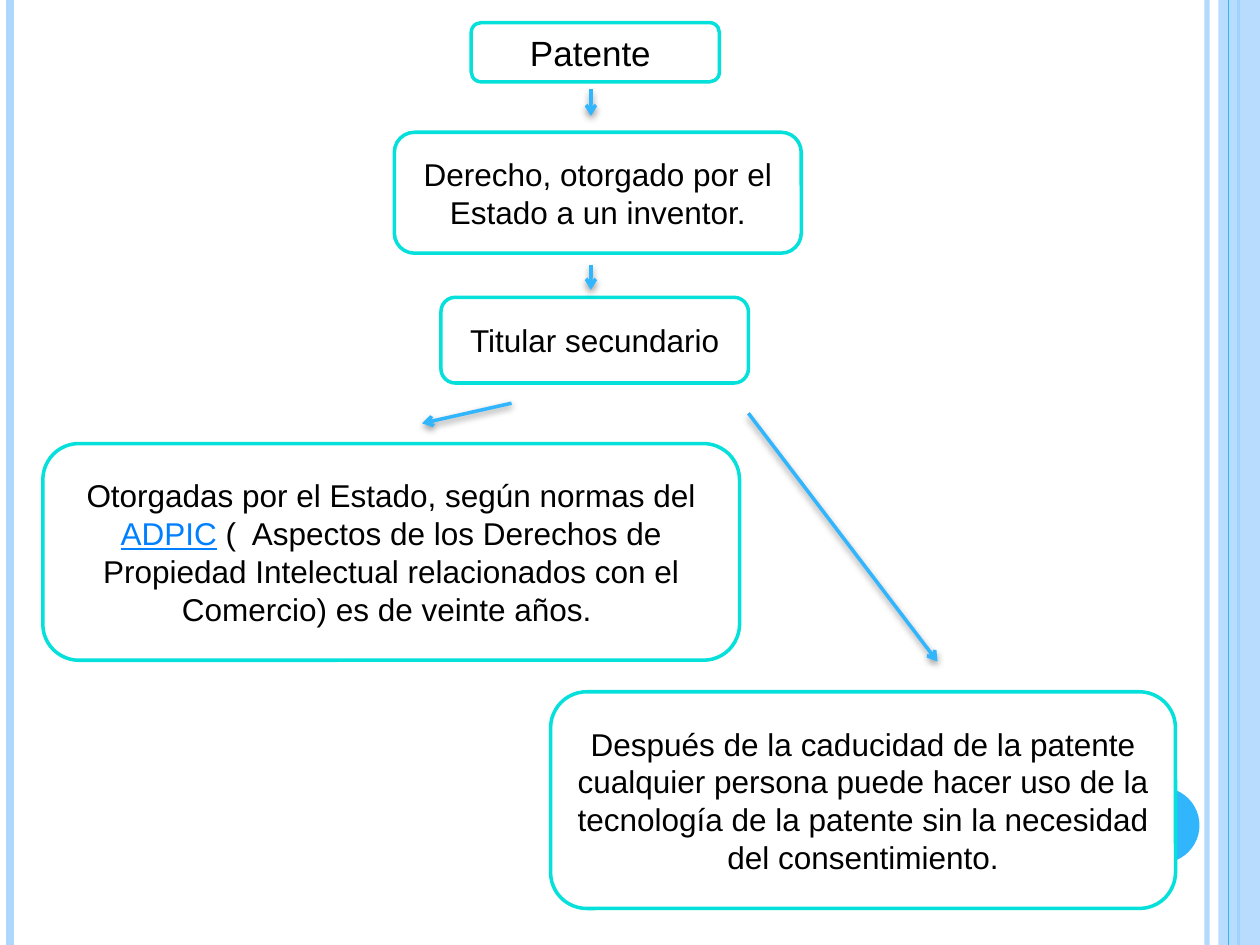
import pptx
import pptx.util
import pptx.dml.color
import pptx.enum.shapes
import pptx.enum.text
import pptx.oxml
import pptx.oxml.ns

Inches = pptx.util.Inches
Pt = pptx.util.Pt
RGBColor = pptx.dml.color.RGBColor
KIND = pptx.enum.shapes.MSO_SHAPE
NS = pptx.oxml.ns.nsdecls("a")

WHITE = RGBColor(0xFF, 0xFF, 0xFF)
BLACK = RGBColor(0, 0, 0)
PALE = RGBColor(0xAE, 0xD7, 0xFE)
BLUE = RGBColor(0x31, 0xB6, 0xFD)
TEAL = RGBColor(0x05, 0xE0, 0xDB)
LINK = RGBColor(0x00, 0x80, 0xFF)

SHADOW = (
    f'<a:effectLst {NS}><a:outerShdw blurRad="{Pt(4)}" dist="{Pt(2)}" dir="5400000" '
    'rotWithShape="0"><a:srgbClr val="000000"><a:alpha val="40000"/></a:srgbClr>'
    "</a:outerShdw></a:effectLst>"
)

deck = pptx.Presentation()
deck.slide_width = Inches(10)
deck.slide_height = Inches(7.5)
slide = deck.slides.add_slide(deck.slide_layouts[6])
shapes = slide.shapes


def add_line(x1, y1, x2, y2, color, width, effect=f"<a:effectLst {NS}/>"):
    line = shapes.add_connector(
        pptx.enum.shapes.MSO_CONNECTOR.STRAIGHT,
        Inches(x1), Inches(y1), Inches(x2), Inches(y2))
    line.line.color.rgb = color
    line.line.width = Pt(width)
    line._element.spPr.append(pptx.oxml.parse_xml(effect))
    return line


def set_alpha(fill, percent):
    tint = fill._xPr.find(".//" + pptx.oxml.ns.qn("a:srgbClr"))
    tint.append(pptx.oxml.parse_xml(f'<a:alpha {NS} val="{percent * 1000}"/>'))


edge = add_line(9.58, 0, 9.58, 7.5, PALE, 3)
set_alpha(edge.line.fill, 93)
add_line(0.08, 0, 0.08, 7.5, PALE, 4.5)
add_line(9.83, 0, 9.83, 7.5, BLUE, 1.5)

band = shapes.add_shape(KIND.RECTANGLE, Inches(9.67), 0, Inches(0.33), Inches(7.5))
band.shadow.inherit = False
band.fill.solid()
band.fill.fore_color.rgb = PALE
band.line.fill.background()
set_alpha(band.fill, 87)

add_line(9.75, 0, 9.75, 7.5, BLUE, 0.75)

dot = shapes.add_shape(KIND.OVAL, Inches(8.92), Inches(6.25), Inches(0.6), Inches(0.6))
dot.shadow.inherit = False
dot.fill.solid()
dot.fill.fore_color.rgb = BLUE
dot.line.fill.background()

boxes = [
    (3.74, 0.18, 1.97, 0.47, 20, ["Patente "]),
    (3.13, 1.05, 3.23, 0.96, 18, ["Derecho, otorgado por el Estado a un inventor."]),
    (3.5, 2.36, 2.44, 0.68, 18, ["Titular secundario"]),
    (0.34, 3.52, 5.53, 1.72, 18, [
        "Otorgadas por el Estado, según normas del ",
        "ADPIC",
        " (  Aspectos de los Derechos de Propiedad Intelectual relacionados "
        "con el Comercio) es de veinte años. "]),
    (4.37, 5.49, 4.96, 1.72, 18, [
        "Después de la caducidad de la patente cualquier persona puede hacer uso "
        "de la tecnología de la patente sin la necesidad del consentimiento."]),
]
for left, top, width, height, size, parts in boxes:
    box = shapes.add_shape(KIND.ROUNDED_RECTANGLE, Inches(left), Inches(top),
                           Inches(width), Inches(height))
    box.shadow.inherit = False
    box.fill.solid()
    box.fill.fore_color.rgb = WHITE
    box.line.color.rgb = TEAL
    box.line.width = Pt(2)
    frame = box.text_frame
    frame.word_wrap = True
    frame.vertical_anchor = pptx.enum.text.MSO_ANCHOR.MIDDLE
    para = frame.paragraphs[0]
    para.alignment = pptx.enum.text.PP_ALIGN.CENTER
    for part in parts:
        run = para.add_run()
        run.text = part
        run.font.name = "Arial"
        run.font.size = Pt(size)
        run.font.color.rgb = BLACK
        if part == "ADPIC":
            run.font.color.rgb = LINK
            run.font.underline = True

arrows = [
    (4.69, 0.71, 4.69, 0.92),
    (4.69, 2.1, 4.69, 2.3),
    (4.06, 3.2, 3.35, 3.36),
    (5.94, 3.28, 7.44, 5.25),
]
for ends in arrows:
    arrow = add_line(*ends, BLUE, 2, SHADOW)
    arrow.line._get_or_add_ln().append(
        pptx.oxml.parse_xml(f'<a:tailEnd {NS} type="arrow"/>'))

deck.save("out.pptx")
